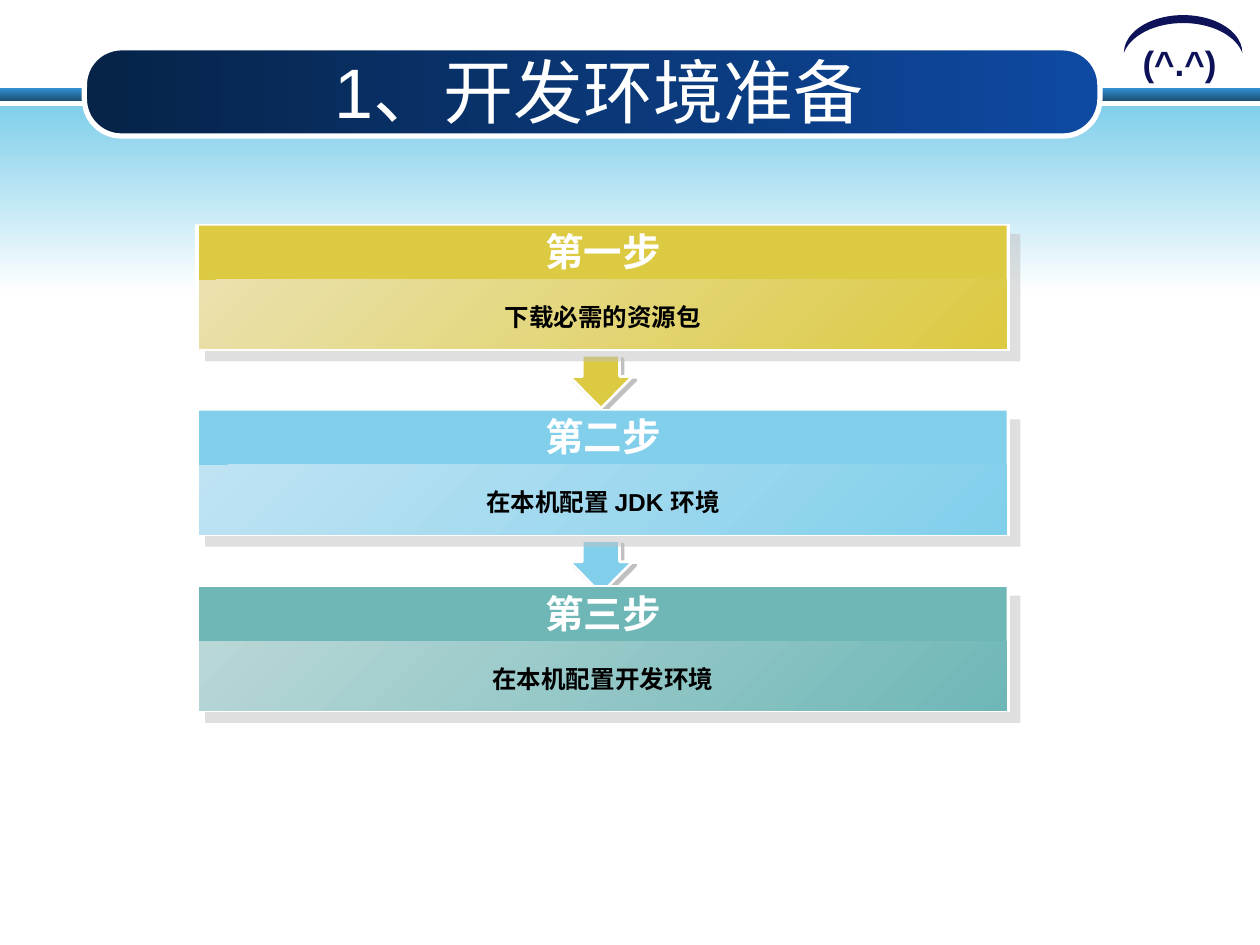
from dataclasses import dataclass

from lxml import etree
from pptx import Presentation
from pptx.dml.color import RGBColor
from pptx.enum.shapes import MSO_SHAPE
from pptx.enum.text import MSO_ANCHOR, MSO_AUTO_SIZE, PP_ALIGN
from pptx.oxml.ns import qn
from pptx.util import Inches, Pt

RECT, ROUND = MSO_SHAPE.RECTANGLE, MSO_SHAPE.ROUNDED_RECTANGLE
ARROW, MOON = MSO_SHAPE.DOWN_ARROW, MSO_SHAPE.MOON
CENTER, LEFT = PP_ALIGN.CENTER, PP_ALIGN.LEFT
MIDDLE, NO_FIT = MSO_ANCHOR.MIDDLE, MSO_AUTO_SIZE.NONE


@dataclass(frozen=True)
class Theme:
    """Colours, font and type sizes of the slide."""
    font: str = "Arial"
    title: int = 40
    head: int = 22
    body: int = 14
    badge: int = 20
    white: str = "FFFFFF"
    black: str = "000000"
    navy: str = "0D1259"
    shadow: str = "C0C0C0"
    stripe: tuple = ("3191D3", "1B4F74")
    sky: tuple = ("81CFEB", "FFFFFF")
    banner: tuple = ("062348", "0E4AA2")
    gold: tuple = ("EAE1AE", "DCCA42")
    blue: tuple = ("BFE3F3", "81CFEB")
    teal: tuple = ("B9D7D7", "6FB7B7")


T = Theme()
STEPS = [
    (1.78, T.gold, "第一步", "下载必需的资源包"),
    (3.25, T.blue, "第二步", "在本机配置 JDK 环境"),
    (4.65, T.teal, "第三步", "在本机配置开发环境"),
]


def add_box(s, kind, box, fill, angle=0, line=0):
    """Add a preset shape with a solid or two-stop gradient fill."""
    sp = s.shapes.add_shape(kind, *map(Inches, box))
    sp.shadow.inherit = False
    if isinstance(fill, str):
        sp.fill.solid()
        sp.fill.fore_color.rgb = RGBColor.from_string(fill)
    else:
        sp.fill.gradient()
        sp.fill.gradient_angle = -angle % 360
        for stop, color in zip(sp.fill.gradient_stops, fill):
            stop.color.rgb = RGBColor.from_string(color)
    if line:
        sp.line.color.rgb = RGBColor.from_string(T.white)
        sp.line.width = Pt(line)
    else:
        sp.line.fill.background()
    return sp


def add_shadow(sp, alpha, dist):
    """Give a shape a hard shadow towards the lower right."""
    effects = sp._element.spPr.find(qn("a:effectLst"))
    outer = etree.SubElement(effects, qn("a:outerShdw"), dist=str(Pt(dist)),
                             dir="2700000", algn="ctr", rotWithShape="0")
    color = etree.SubElement(outer, qn("a:srgbClr"), val=T.shadow)
    etree.SubElement(color, qn("a:alpha"), val=str(alpha * 1000))


def set_text(tf, text, size, color, bold=True, align=CENTER):
    """Write one formatted paragraph into a text frame."""
    tf.word_wrap = True
    p = tf.paragraphs[0]
    p.text = text
    p.alignment = align
    p.font.name, p.font.size, p.font.bold = T.font, Pt(size), bold
    p.font.color.rgb = RGBColor.from_string(color)


def add_label(s, box, text, size, color, align=CENTER):
    """Add a bold one-line text box."""
    tb = s.shapes.add_textbox(*map(Inches, box))
    set_text(tb.text_frame, text, size, color, align=align)


def add_backdrop(s, width):
    """Draw the stripe and the fading sky across the slide."""
    add_box(s, RECT, (0, 0.7, width, 0.1), T.stripe, 90)
    add_box(s, RECT, (0, 0.84, width, 1.49), T.sky, 90)


def add_banner(s, box, text):
    """Draw the rounded banner and set the title placeholder on it."""
    x, y, w, h = box
    sp = add_box(s, ROUND, box, T.banner, line=3)
    sp.adjustments[0] = 0.42
    title = s.shapes.title
    s.shapes._spTree.append(title._element)
    title.left, title.top, title.width, title.height = map(
        Inches, (x + 0.25, y + 0.03, w - 0.39, h - 0.08))
    tf = title.text_frame
    tf.auto_size, tf.vertical_anchor = NO_FIT, MIDDLE
    set_text(tf, text, T.title, T.white, bold=False)


def add_badge(s, box):
    """Draw the smiling face under its arc."""
    x, y, w, h = box
    add_label(s, (x + 0.05, y + 0.16, w, 0.43), "(^.^)", T.badge, T.navy, LEFT)
    moon = add_box(s, MOON, (x + (w - h) / 2, y + (h - w) / 2, h, w), T.navy)
    moon.rotation = 90
    moon.adjustments[0] = 0.21


def add_arrow(s, box, color):
    """Draw the arrow that leads to the next step."""
    sp = add_box(s, ARROW, box, color, line=1.5)
    sp.adjustments[0], sp.adjustments[1] = 0.59, 0.6
    add_shadow(sp, 100, 2.8)


def add_step(s, box, colors, head, body):
    """Draw one step card with a header band and a description band."""
    x, y, w, h = box
    inner, width = x + 0.03, w - 0.05
    add_shadow(add_box(s, RECT, box, T.white, line=0.75), 50, 8.5)
    add_box(s, RECT, (inner, y + 0.01, width, 0.45 * h), colors[1])
    add_box(s, RECT, (inner, y + 0.44 * h, width, 0.55 * h), colors, 45)
    add_label(s, (inner, y - 0.02, width, 0.47), head, T.head, T.white)
    add_label(s, (inner, y + 0.57 * h, width, 0.33), body, T.body, T.black)


def add_steps(s, x, w, h):
    """Draw the arrows first, then the cards over them."""
    for top, colors, _, _ in STEPS[:-1]:
        add_arrow(s, (x + w / 2 - 0.26, top + h + 0.04, 0.5, 0.42), colors[1])
    for top, colors, head, body in STEPS:
        add_step(s, (x, top, w, h), colors, head, body)


def main():
    """Build and save the slide."""
    prs = Presentation()
    prs.slide_width, prs.slide_height = Inches(10), Inches(7.5)
    s = prs.slides.add_slide(prs.slide_layouts[5])
    add_backdrop(s, 10)
    add_badge(s, (8.92, 0.12, 0.94, 0.3))
    add_banner(s, (0.67, 0.38, 8.06, 0.7), "1、开发环境准备")
    add_steps(s, 1.55, 6.46, 1)
    prs.save("out.pptx")


if __name__ == "__main__":
    main()
